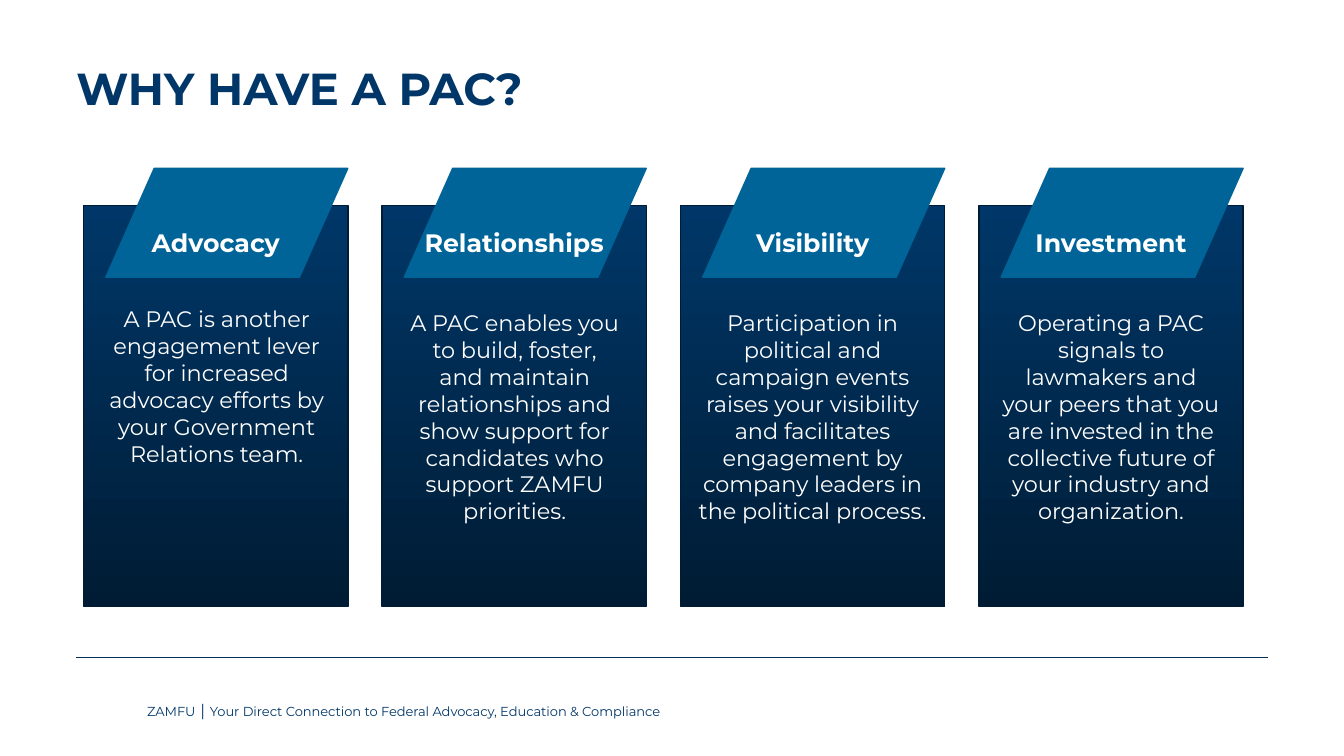
from dataclasses import dataclass

from lxml.etree import SubElement
from pptx import Presentation
from pptx.dml.color import RGBColor
from pptx.enum.shapes import MSO_CONNECTOR, MSO_SHAPE
from pptx.enum.text import MSO_ANCHOR, PP_ALIGN
from pptx.oxml.ns import qn
from pptx.shapes.autoshape import Shape
from pptx.slide import Slide
from pptx.util import Emu, Pt

PX = 9144  # 100 px to the inch
NAVY = RGBColor(0x00, 0x37, 0x68)
MIDNIGHT = RGBColor(0x00, 0x1C, 0x34)
BLUE = RGBColor(0x00, 0x64, 0x98)
RULE = RGBColor(0x00, 0x30, 0x57)
WHITE = RGBColor(0xFF, 0xFF, 0xFF)
FONT = "Montserrat"

CARD_LEFT, CARD_TOP, CARD_WIDTH, CARD_HEIGHT = 83, 204, 262, 398
CARD_PITCH = 296
TAB_INDENT, TAB_TOP, TAB_WIDTH, TAB_HEIGHT = 22, 167, 240, 108
LABEL_TOP, LABEL_HEIGHT = 221, 40


@dataclass(frozen=True)
class Box:
    left: int
    top: int
    width: int
    height: int

    def emu(self) -> tuple[Emu, ...]:
        sides = (self.left, self.top, self.width, self.height)
        return tuple(Emu(side * PX) for side in sides)


@dataclass(frozen=True)
class Card:
    label: str
    label_left: int
    label_width: int
    body: str
    body_box: Box


CARDS = [
    Card("Advocacy", 118, 192,
         "A PAC is another engagement lever for increased advocacy efforts "
         "by your Government Relations team.",
         Box(93, 298, 244, 172)),
    Card("Relationships", 397, 226,
         "A PAC enables you to build, foster,\n"
         "and maintain relationships and show support for candidates who "
         "support ZAMFU priorities.",
         Box(393, 302, 235, 226)),
    Card("Visibility", 693, 226,
         "Participation in political and campaign events raises your "
         "visibility and facilitates engagement by company leaders in the "
         "political process.",
         Box(683, 302, 246, 252)),
    Card("Investment", 968, 268,
         "Operating a PAC signals to lawmakers and your peers that you are "
         "invested in the collective future of your industry and organization.",
         Box(982, 302, 240, 226)),
]


def add_text(page: Slide, box: Box, text: str, size: float, color: RGBColor,
             bold: bool = False, align: PP_ALIGN = PP_ALIGN.LEFT,
             line_spacing: float = 1.0) -> None:
    frame = page.shapes.add_textbox(*box.emu()).text_frame
    frame.word_wrap = True
    frame.vertical_anchor = MSO_ANCHOR.TOP
    frame.text = text
    for paragraph in frame.paragraphs:
        paragraph.alignment = align
        paragraph.line_spacing = line_spacing
        for span in paragraph.runs:
            span.font.name = FONT
            span.font.size = Pt(size)
            span.font.bold = bold
            span.font.color.rgb = color


def add_outlined_shape(page: Slide, kind: MSO_SHAPE, box: Box,
                       outline: RGBColor) -> Shape:
    shape = page.shapes.add_shape(kind, *box.emu())
    shape.shadow.inherit = False
    shape.line.color.rgb = outline
    shape.line.width = Pt(1)
    return shape


def add_panel(page: Slide, left: int) -> None:
    box = Box(left, CARD_TOP, CARD_WIDTH, CARD_HEIGHT)
    panel = add_outlined_shape(page, MSO_SHAPE.RECTANGLE, box, MIDNIGHT)
    panel.fill.gradient()
    panel.fill.gradient_angle = 270
    for stop, color in zip(panel.fill.gradient_stops, (NAVY, MIDNIGHT)):
        stop.color.rgb = color


def add_tab(page: Slide, left: int) -> None:
    box = Box(left, TAB_TOP, TAB_WIDTH, TAB_HEIGHT)
    tab = add_outlined_shape(page, MSO_SHAPE.FLOWCHART_DATA, box, BLUE)
    tab.fill.solid()
    tab.fill.fore_color.rgb = BLUE


def add_card(page: Slide, card: Card, left: int) -> None:
    add_panel(page, left)
    add_tab(page, left + TAB_INDENT)
    label_box = Box(card.label_left, LABEL_TOP, card.label_width, LABEL_HEIGHT)
    add_text(page, label_box, card.label, 18, WHITE, bold=True,
             align=PP_ALIGN.CENTER)
    add_text(page, card.body_box, card.body, 16, WHITE, align=PP_ALIGN.CENTER)


def add_footer(page: Slide) -> None:
    ends = (Emu(x * PX) for x in (1258, 652, 75, 652))
    rule = page.shapes.add_connector(MSO_CONNECTOR.STRAIGHT, *ends)
    rule.line.color.rgb = RULE
    rule.line.width = Pt(0.5)
    SubElement(rule._element.spPr, qn("a:effectLst"))
    add_text(page, Box(136, 693, 592, 42),
             "ZAMFU │ Your Direct Connection to Federal Advocacy, "
             "Education & Compliance", 9.3, NAVY)


def main() -> None:
    deck = Presentation()
    deck.slide_width, deck.slide_height = Emu(1333 * PX), Emu(750 * PX)
    page = deck.slides.add_slide(deck.slide_layouts[6])
    add_footer(page)
    add_text(page, Box(66, 61, 1193, 108), "WHY HAVE A PAC?", 32, NAVY,
             bold=True, line_spacing=0.9)
    for index, card in enumerate(CARDS):
        add_card(page, card, CARD_LEFT + index * CARD_PITCH)
    deck.save("out.pptx")


if __name__ == "__main__":
    main()
